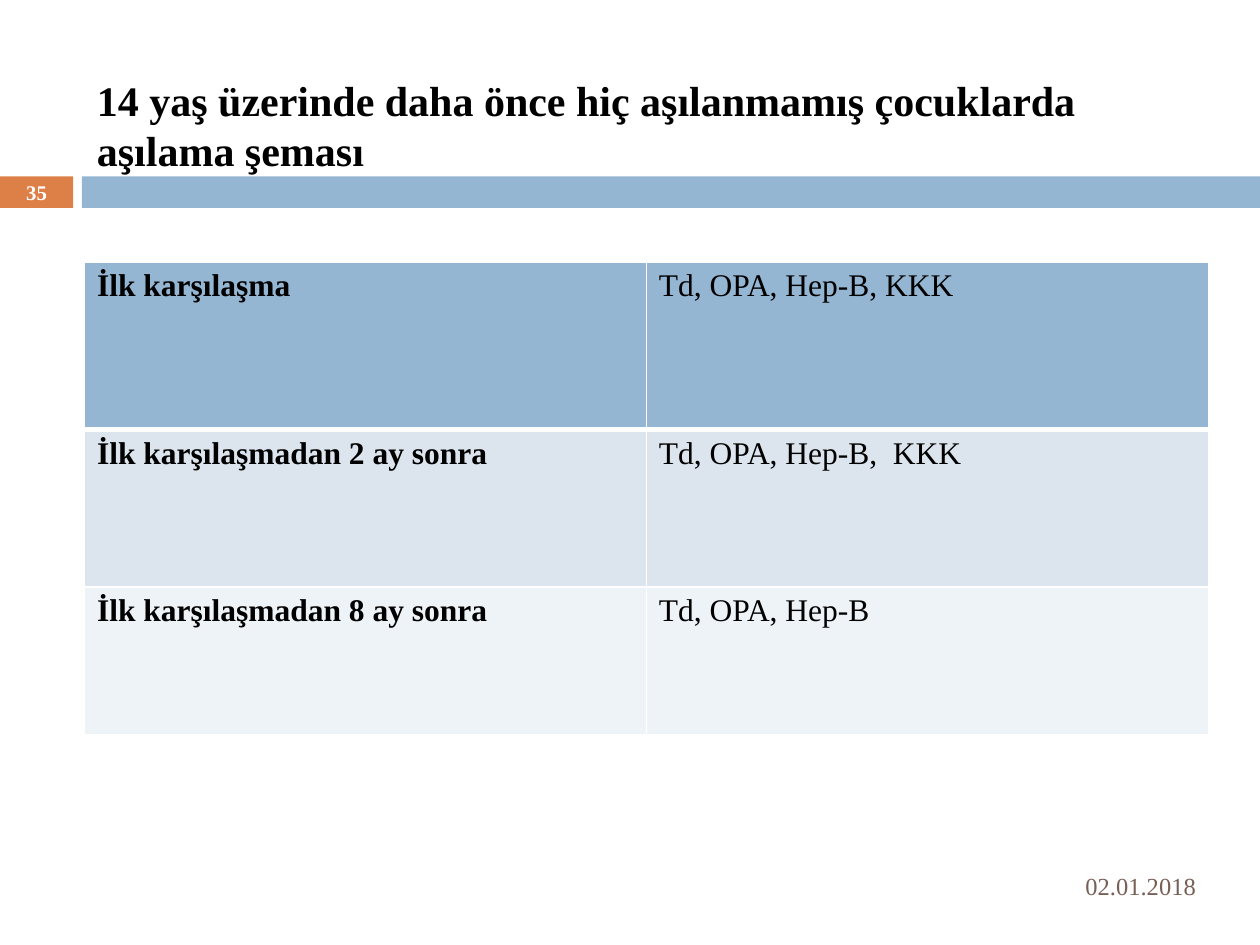
from dataclasses import dataclass

from lxml import etree
from pptx import Presentation
from pptx import util as u
from pptx.dml.color import RGBColor
from pptx.enum import shapes, text
from pptx.oxml.ns import qn

WIDTH, HEIGHT = 10, 7.5
LEFT, CONTENT_WIDTH = 0.67, 8.92
FONT = "Times New Roman"
BLACK, WHITE, BROWN = "000000", "FFFFFF", "775F55"
ORANGE, BLUE = "DD8047", "94B6D2"


@dataclass
class Box:
    left: float
    top: float
    width: float
    height: float

    def emu(self) -> list:
        return [u.Inches(v) for v in (self.left, self.top, self.width, self.height)]


@dataclass
class Label:
    words: str
    box: Box
    size: float
    color: str
    bold: bool = False
    align: text.PP_ALIGN = text.PP_ALIGN.LEFT
    anchor: text.MSO_ANCHOR = text.MSO_ANCHOR.MIDDLE
    bottom_inset: float = 0.05


@dataclass
class Visit:
    when: str
    vaccines: str
    height: float
    fill: str
    rule_below: float = 1


BANDS = [
    (Box(0, 1.4, 0.58, 0.25), ORANGE),
    (Box(0.65, 1.4, WIDTH - 0.65, 0.25), BLUE),
]
LABELS = [
    Label("14 yaş üzerinde daha önce hiç aşılanmamış çocuklarda aşılama şeması",
          Box(LEFT, 0.25, CONTENT_WIDTH, 1.14), 24, BLACK, bold=True,
          anchor=text.MSO_ANCHOR.BOTTOM, bottom_inset=0),
    Label("02.01.2018", Box(6.67, 6.83, 2.92, 0.4), 14, BROWN,
          align=text.PP_ALIGN.RIGHT),
    Label("35", Box(0, 1.39, 0.58, 0.27), 11.9, WHITE, bold=True,
          align=text.PP_ALIGN.CENTER),
]
VISITS = [
    Visit("İlk karşılaşma", "Td, OPA, Hep-B, KKK", 1.33, BLUE, rule_below=3),
    Visit("İlk karşılaşmadan 2 ay sonra", "Td, OPA, Hep-B,  KKK", 1.25, "DCE5EE"),
    Visit("İlk karşılaşmadan 8 ay sonra", "Td, OPA, Hep-B", 1.17, "EEF3F7"),
]


def rgb(value: str) -> RGBColor:
    return RGBColor.from_string(value)


def add_run(paragraph, words: str, size: float, color: str, bold: bool) -> None:
    run = paragraph.add_run()
    run.text = words
    run.font.name = FONT
    run.font.size = u.Pt(size)
    run.font.bold = bold
    run.font.color.rgb = rgb(color)


def add_band(slide, box: Box, color: str) -> None:
    band = slide.shapes.add_shape(shapes.MSO_SHAPE.RECTANGLE, *box.emu())
    band.shadow.inherit = False
    band.fill.solid()
    band.fill.fore_color.rgb = rgb(color)
    band.line.fill.background()


def add_label(slide, label: Label) -> None:
    frame = slide.shapes.add_textbox(*label.box.emu()).text_frame
    frame.word_wrap = True
    frame.vertical_anchor = label.anchor
    frame.margin_bottom = u.Inches(label.bottom_inset)
    paragraph = frame.paragraphs[0]
    paragraph.alignment = label.align
    add_run(paragraph, label.words, label.size, label.color, label.bold)


def set_borders(cell, top: float, bottom: float) -> None:
    """Draw white cell borders; they must precede the fill in the XML."""
    properties = cell._tc.get_or_add_tcPr()
    sides = {"a:lnL": 1, "a:lnR": 1, "a:lnT": top, "a:lnB": bottom}
    for position, (tag, points) in enumerate(sides.items()):
        line = etree.Element(qn(tag), w=str(u.Pt(points)))
        fill = etree.SubElement(line, qn("a:solidFill"))
        etree.SubElement(fill, qn("a:srgbClr"), val=WHITE)
        properties.insert(position, line)


def add_schedule(slide, visits: list[Visit]) -> None:
    box = Box(LEFT, 2.08, CONTENT_WIDTH, sum(v.height for v in visits))
    table = slide.shapes.add_table(len(visits), 2, *box.emu()).table
    for column in table.columns:
        column.width = u.Inches(CONTENT_WIDTH / 2)
    rule_above = 1
    for row, visit in enumerate(visits):
        table.rows[row].height = u.Inches(visit.height)
        for column, words in enumerate((visit.when, visit.vaccines)):
            cell = table.cell(row, column)
            cell.fill.solid()
            cell.fill.fore_color.rgb = rgb(visit.fill)
            set_borders(cell, rule_above, visit.rule_below)
            add_run(cell.text_frame.paragraphs[0], words, 18, BLACK, column == 0)
        rule_above = visit.rule_below


def main() -> None:
    deck = Presentation()
    deck.slide_width, deck.slide_height = u.Inches(WIDTH), u.Inches(HEIGHT)
    slide = deck.slides.add_slide(deck.slide_layouts[6])
    for box, color in BANDS:
        add_band(slide, box, color)
    for label in LABELS:
        add_label(slide, label)
    add_schedule(slide, VISITS)
    deck.save("out.pptx")


if __name__ == "__main__":
    main()
